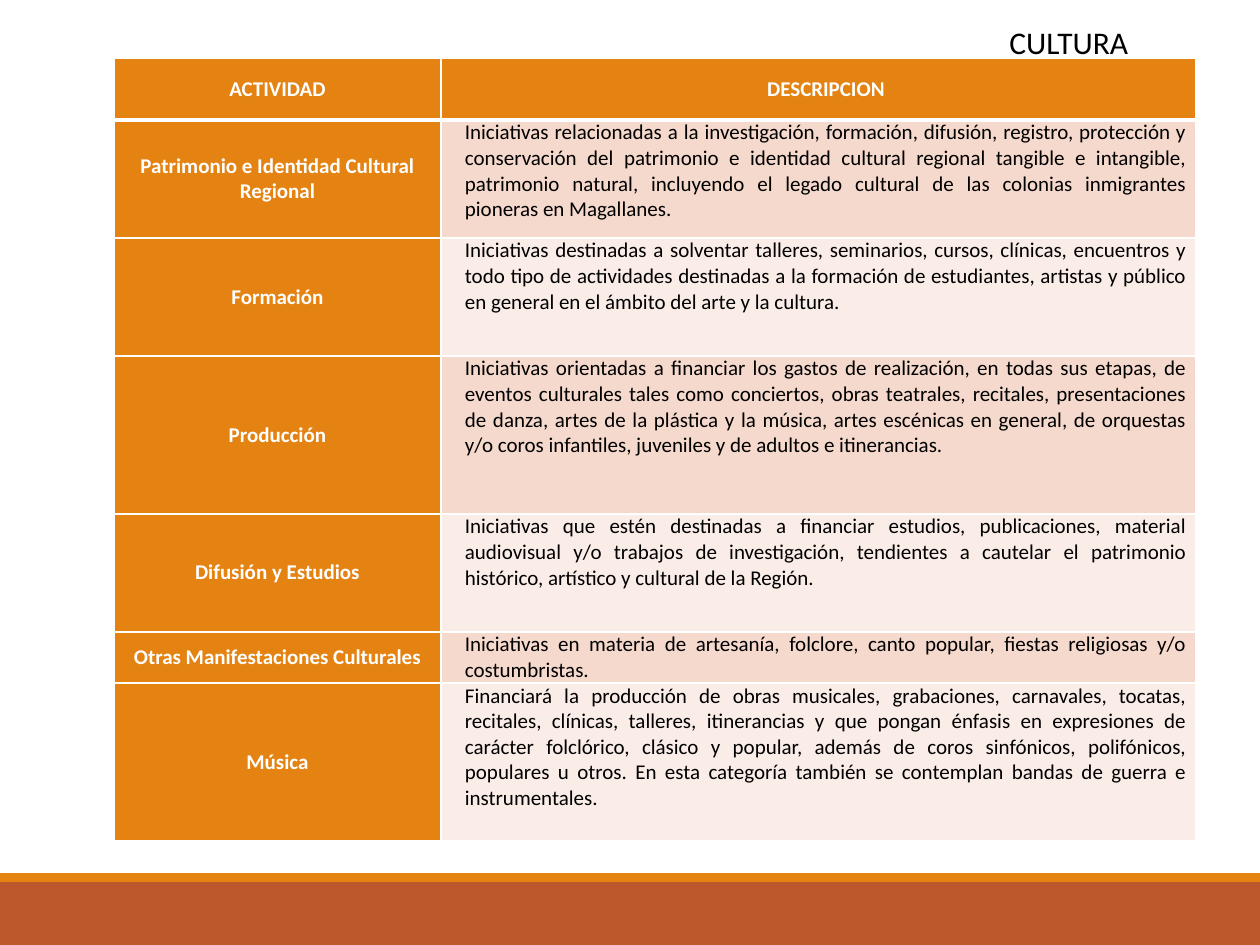
from dataclasses import dataclass

from lxml.etree import SubElement
from pptx import Presentation
from pptx.dml.color import RGBColor as Color
from pptx.enum.shapes import MSO_SHAPE as Shape
from pptx.enum.text import MSO_ANCHOR as Anchor, MSO_AUTO_SIZE as AutoSize, PP_ALIGN as Align
from pptx.oxml.ns import qn
from pptx.util import Emu, Pt


@dataclass(frozen=True)
class Theme:
    font: str = "Calibri"
    orange: str = "E48312"
    rust: str = "BD582C"
    white: str = "FFFFFF"
    black: str = "000000"
    bands: tuple = ("F5D9CC", "FAEDE7")
    title_size: int = 18
    table_size: int = 12
    border: int = 1
    header_border: int = 3


THEME = Theme()
PX_PER_INCH = 126
PAGE_WIDTH, PAGE_HEIGHT = 1260, 945
COLUMN_WIDTHS = 327, 755
HEADINGS = "ACTIVIDAD", "DESCRIPCION"
HEADING_HEIGHT = 62
ACTIVITIES = [
    (118, "Patrimonio e Identidad Cultural Regional",
     "Iniciativas relacionadas a la investigación, formación, difusión, registro, protección y "
     "conservación del patrimonio e identidad cultural regional tangible e intangible, patrimonio "
     "natural, incluyendo el legado cultural de las colonias inmigrantes pioneras en Magallanes."),
    (118, "Formación",
     "Iniciativas destinadas a solventar talleres, seminarios, cursos, clínicas, encuentros y todo "
     "tipo de actividades destinadas a la formación de estudiantes, artistas y público en general "
     "en el ámbito del arte y la cultura."),
    (158, "Producción",
     "Iniciativas orientadas a financiar los gastos de realización, en todas sus etapas, de eventos "
     "culturales tales como conciertos, obras teatrales, recitales, presentaciones de danza, artes "
     "de la plástica y la música, artes escénicas en general, de orquestas y/o coros infantiles, "
     "juveniles y de adultos e itinerancias."),
    (118, "Difusión y Estudios",
     "Iniciativas que estén destinadas a financiar estudios, publicaciones, material audiovisual "
     "y/o trabajos de investigación, tendientes a cautelar el patrimonio histórico, artístico y "
     "cultural de la Región."),
    (51, "Otras Manifestaciones Culturales",
     "Iniciativas en materia de artesanía, folclore, canto popular, fiestas religiosas y/o "
     "costumbristas."),
    (158, "Música",
     "Financiará la producción de obras musicales, grabaciones, carnavales, tocatas, recitales, "
     "clínicas, talleres, itinerancias y que pongan énfasis en expresiones de carácter folclórico, "
     "clásico y popular, además de coros sinfónicos, polifónicos, populares u otros. En esta "
     "categoría también se contemplan bandas de guerra e instrumentales."),
]


def px(length):
    return Emu(round(length * 914400 / PX_PER_INCH))


def set_format(target, values):
    for name, value in values.items():
        setattr(target, name, value)


def paint(target, color):
    target.fill.solid()
    target.fill.fore_color.rgb = Color.from_string(color)


def write(para, text, size, color, bold=False):
    span = para.add_run()
    span.text = text
    set_format(span.font, {"name": THEME.font, "size": Pt(size), "bold": bold})
    span.font.color.rgb = Color.from_string(color)


def add_band(page, top, height, color):
    band = page.shapes.add_shape(Shape.RECTANGLE, 0, px(top), px(PAGE_WIDTH), px(height))
    band.shadow.inherit = False
    paint(band, color)
    band.line.fill.background()


def add_title(page, text):
    box = page.shapes.add_textbox(px(997), px(17), px(145), px(50))
    set_format(box.text_frame, {"word_wrap": False, "auto_size": AutoSize.SHAPE_TO_FIT_TEXT})
    write(box.text_frame.paragraphs[0], text, THEME.title_size, THEME.black)


def set_borders(cell, top, bottom):
    properties = cell._tc.get_or_add_tcPr()
    widths = {"lnL": THEME.border, "lnR": THEME.border, "lnT": top, "lnB": bottom}
    for position, (side, width) in enumerate(widths.items()):
        line = SubElement(properties, qn(f"a:{side}"), w=str(Pt(width)))
        fill = SubElement(line, qn("a:solidFill"))
        SubElement(fill, qn("a:srgbClr"), val=THEME.white)
        properties.insert(position, line)


def fill_cell(cell, text, row, column):
    is_heading = row == 0 or column == 0
    set_format(cell, {
        "margin_left": px(9), "margin_right": px(9), "margin_top": 0, "margin_bottom": 0,
        "vertical_anchor": Anchor.MIDDLE if is_heading else Anchor.TOP,
    })
    paint(cell, THEME.orange if is_heading else THEME.bands[(row - 1) % 2])
    set_borders(cell,
                THEME.header_border if row == 1 else THEME.border,
                THEME.header_border if row == 0 else THEME.border)
    para = cell.text_frame.paragraphs[0]
    para.alignment = Align.CENTER if is_heading else Align.JUSTIFY
    if column == 1:
        para._p.get_or_add_pPr().set("marL", str(px(15)))
    write(para, text, THEME.table_size, THEME.white if is_heading else THEME.black, is_heading)


def add_activity_table(page):
    rows = [(HEADING_HEIGHT, *HEADINGS), *ACTIVITIES]
    total_height = sum(height for height, *_ in rows)
    table = page.shapes.add_table(len(rows), len(COLUMN_WIDTHS), px(114), px(58),
                                  px(sum(COLUMN_WIDTHS)), px(total_height)).table
    table.horz_banding = False
    for column, width in zip(table.columns, COLUMN_WIDTHS):
        column.width = px(width)
    for row, (height, *texts) in enumerate(rows):
        table.rows[row].height = px(height)
        for column, text in enumerate(texts):
            fill_cell(table.cell(row, column), text, row, column)


def main():
    deck = Presentation()
    set_format(deck, {"slide_width": px(PAGE_WIDTH), "slide_height": px(PAGE_HEIGHT)})
    page = deck.slides.add_slide(deck.slide_layouts[6])
    add_band(page, 882, 63, THEME.rust)
    add_band(page, 873, 9, THEME.orange)
    add_activity_table(page)
    add_title(page, "CULTURA")
    deck.save("out.pptx")


if __name__ == "__main__":
    main()
